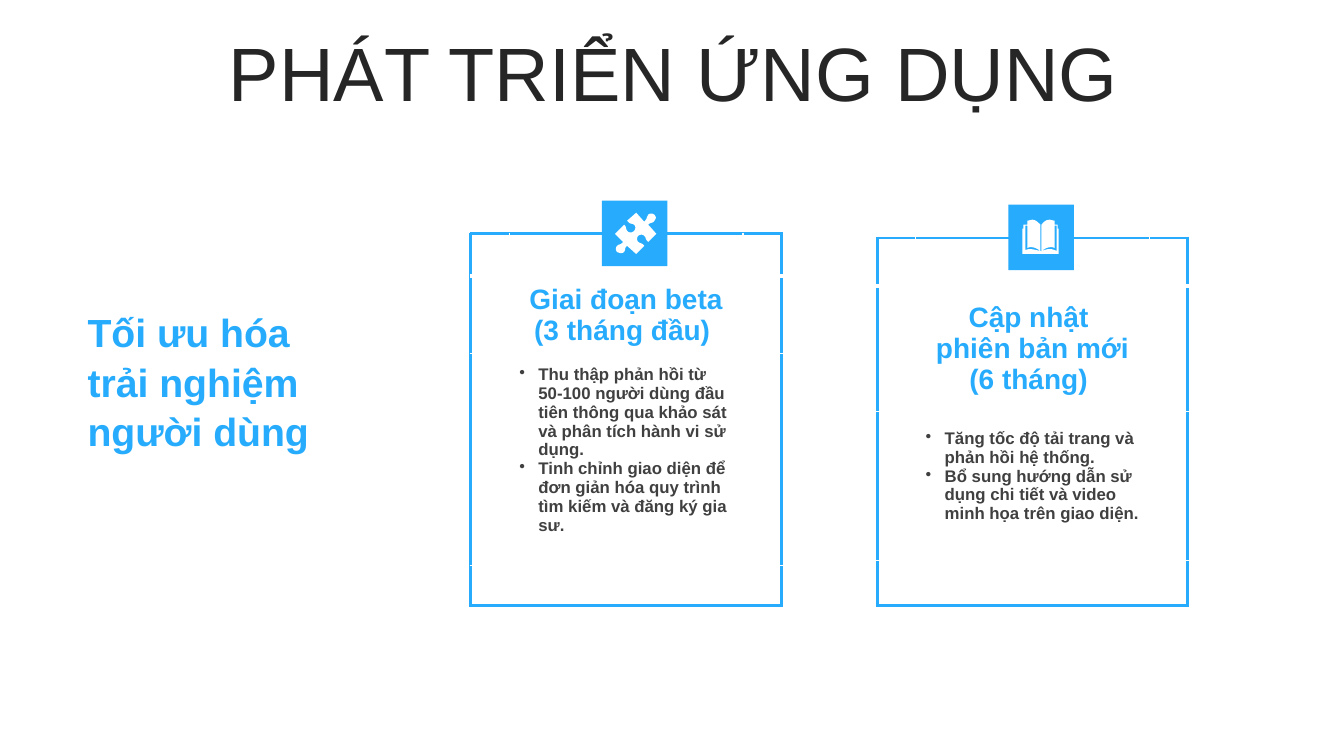
import pptx
import pptx.util
import pptx.dml.color
import pptx.enum.shapes
import pptx.enum.text
import pptx.oxml
import pptx.oxml.ns
from dataclasses import dataclass

Inches, Pt = pptx.util.Inches, pptx.util.Pt
ALIGN, ANCHOR = pptx.enum.text.PP_ALIGN, pptx.enum.text.MSO_ANCHOR

TITLE = "PHÁT TRIỂN ỨNG DỤNG"
AIM = ["Tối ưu hóa", "trải nghiệm người dùng"]

# Icon outlines in hundredths of an inch from the tile's corner:
# a pair is a straight step, six numbers are a Bézier step.
PUZZLE = [
    (52, 14), (54, 16, 54, 18, 52, 20), (51, 23, 48, 21, 46, 24), (54, 33), (46, 41),
    (43, 39, 44, 37, 42, 35), (40, 33, 37, 34, 36, 35), (35, 36, 34, 39, 36, 41),
    (39, 43, 40, 42, 42, 45), (34, 53), (25, 45), (22, 47, 24, 48, 22, 51),
    (20, 53, 17, 52, 15, 51), (14, 50, 13, 47, 15, 45), (17, 43, 19, 44, 21, 41),
    (13, 33), (22, 24), (25, 26, 23, 29, 26, 31), (28, 32, 30, 32, 32, 30),
    (33, 29, 34, 26, 32, 24), (29, 22, 28, 24, 25, 20), (34, 12), (42, 21),
    (45, 18, 44, 17, 46, 14), (48, 12, 51, 13, 52, 14),
]
BOOK = [
    (32, 46), (32, 46, 33, 47, 33, 46), (39, 44, 42, 43, 48, 46), (48, 21), (46, 21),
    (46, 29, 46, 36, 46, 43), (42, 41, 37, 43, 33, 46), (33, 20),
    (35, 17, 38, 15, 41, 15), (43, 15, 44, 16, 46, 16), (46, 20), (49, 20), (49, 24),
    (50, 24), (50, 49), (14, 49), (14, 24), (15, 24), (15, 20), (19, 20), (19, 16),
    (21, 16, 22, 15, 24, 15), (27, 15, 29, 17, 32, 20), (32, 46),
    (28, 43, 23, 41, 19, 43), (19, 21), (17, 21), (17, 45), (23, 43, 26, 45, 32, 46),
]

CARDS = [
    {"icon": PUZZLE, "rows": [0.42, 0.77, 2.1, 0.4],
     "heading": ["Giai đoạn beta", "(3 tháng đầu) "],
     "points": ["Thu thập phản hồi từ 50-100 người dùng đầu tiên thông qua khảo sát "
                "và phân tích hành vi sử dụng.",
                "Tinh chỉnh giao diện để đơn giản hóa quy trình tìm kiếm và đăng ký gia sư."]},
    {"icon": BOOK, "rows": [0.48, 1.24, 1.48, 0.45],
     "heading": ["Cập nhật ", "phiên bản mới", "(6 tháng) "],
     "points": ["Tăng tốc độ tải trang và phản hồi hệ thống.",
                "Bổ sung hướng dẫn sử dụng chi tiết và video minh họa trên giao diện."]},
]
COLUMNS = [0.38, 2.32, 0.38]
CARD_LEFT, CARD_PITCH, CARD_BOTTOM = 4.67, 4.03, 6.01
TILE_SIDE, TILE_INSET, TILE_RISE = 0.65, 1.3, 0.33


@dataclass(frozen=True)
class Theme:
    font: str = "Arial"
    accent: str = "27ACFD"
    paper: str = "FFFFFF"
    ink: str = "262626"
    body_ink: str = "404040"
    title: int = 54
    aim: int = 28
    heading: int = 20
    body: int = 12
    frame_line: float = 2.25
    inner_line: float = 1
    gap_line: float = 3


THEME = Theme()


def color(code):
    return pptx.dml.color.RGBColor.from_string(code)


def write(frame, lines, size, ink, bold=False, align=ALIGN.LEFT, bullet=False,
          spacing=None, before=0):
    for index, line in enumerate(lines):
        para = frame.paragraphs[0] if index == 0 else frame.add_paragraph()
        para.alignment, para.space_before = align, Pt(before)
        if spacing:
            para.line_spacing = spacing
        span = para.add_run()
        span.text = line
        span.font.name, span.font.size, span.font.bold = THEME.font, Pt(size), bold
        span.font.color.rgb = color(ink)
        if bullet:
            settings = para._p.get_or_add_pPr()
            settings.set("marL", str(Inches(0.19)))
            settings.set("indent", str(-Inches(0.19)))
            mark = pptx.oxml.parse_xml(
                f'<a:buChar {pptx.oxml.ns.nsdecls("a")} char="•"/>')
            settings.append(mark)


def draw_border(cell, side, ink, width):
    cell._tc.get_or_add_tcPr().append(pptx.oxml.parse_xml(
        f'<a:ln{side} {pptx.oxml.ns.nsdecls("a")} w="{Pt(width)}">'
        f'<a:solidFill><a:srgbClr val="{ink}"/></a:solidFill></a:ln{side}>'))


def frame_cell(cell, row, column, last_row, last_column):
    """Accent lines on the card's outer edge, paper-coloured lines inside."""
    outer = {"L": column == 0, "R": column == last_column,
             "T": row == 0, "B": row == last_row}
    for side, is_outer in outer.items():
        if is_outer:
            draw_border(cell, side, THEME.accent, THEME.frame_line)
        else:
            wide = (side, row) in (("B", 0), ("T", 1))
            draw_border(cell, side, THEME.paper,
                        THEME.gap_line if wide else THEME.inner_line)
    cell.fill.solid()
    cell.fill.fore_color.rgb = color(THEME.paper)
    cell.vertical_anchor = ANCHOR.MIDDLE


def paint(shape, ink):
    shape.shadow.inherit = False
    shape.fill.solid()
    shape.fill.fore_color.rgb = color(ink)
    shape.line.fill.background()


def trace(steps, samples=6):
    """Turn straight and Bézier steps into points in thousandths of an inch."""
    points = []
    for step in steps:
        if len(step) == 2:
            points.append(step)
            continue
        corners = [points[-1], step[:2], step[2:4], step[4:]]
        for index in range(1, samples + 1):
            t = index / samples
            weights = ((1 - t) ** 3, 3 * t * (1 - t) ** 2, 3 * t * t * (1 - t), t ** 3)
            points.append(tuple(sum(w * corner[axis] for w, corner in zip(weights, corners))
                                for axis in (0, 1)))
    return [(x * 10, y * 10) for x, y in points]


def add_icon(page, steps, left, top):
    tile = page.shapes.add_shape(pptx.enum.shapes.MSO_SHAPE.RECTANGLE, Inches(left),
                                 Inches(top), Inches(TILE_SIDE), Inches(TILE_SIDE))
    paint(tile, THEME.accent)
    start, *rest = trace(steps)
    outline = page.shapes.build_freeform(*start, scale=Inches(1) / 1000)
    outline.add_line_segments(rest, close=True)
    paint(outline.convert_to_shape(Inches(left), Inches(top)), THEME.paper)


def add_card(page, card, left):
    rows = card["rows"]
    top = CARD_BOTTOM - sum(rows)
    table = page.shapes.add_table(len(rows), len(COLUMNS), Inches(left), Inches(top),
                                  Inches(sum(COLUMNS)), Inches(sum(rows))).table
    table.first_row = table.horz_banding = False
    for column, width in enumerate(COLUMNS):
        table.columns[column].width = Inches(width)
    for row, height in enumerate(rows):
        table.rows[row].height = Inches(height)
        for column in range(len(COLUMNS)):
            frame_cell(table.cell(row, column), row, column,
                       len(rows) - 1, len(COLUMNS) - 1)
    write(table.cell(1, 1).text_frame, card["heading"], THEME.heading, THEME.accent,
          bold=True, align=ALIGN.CENTER)
    body = table.cell(2, 1)
    body.margin_bottom = Inches(0.24)
    write(body.text_frame, card["points"], THEME.body, THEME.body_ink,
          bold=True, bullet=True)
    add_icon(page, card["icon"], left + TILE_INSET, top - TILE_RISE)


def main():
    deck = pptx.Presentation()
    deck.slide_width, deck.slide_height = Inches(13.33), Inches(7.5)
    page = deck.slides.add_slide(deck.slide_layouts[5])

    title = page.shapes.title
    title.left, title.top = Inches(0.35), Inches(0.37)
    title.width, title.height = Inches(12.66), Inches(0.79)
    title.text_frame.auto_size = pptx.enum.text.MSO_AUTO_SIZE.NONE
    title.text_frame.vertical_anchor = ANCHOR.MIDDLE
    write(title.text_frame, [TITLE], THEME.title, THEME.ink, align=ALIGN.CENTER,
          spacing=0.9, before=10)

    aim = page.shapes.add_textbox(Inches(0.77), Inches(2.99), Inches(2.96), Inches(1.51))
    aim.text_frame.word_wrap = True
    write(aim.text_frame, AIM, THEME.aim, THEME.accent, bold=True, spacing=1.05)

    for index, card in enumerate(CARDS):
        add_card(page, card, CARD_LEFT + index * CARD_PITCH)
    deck.save("out.pptx")


if __name__ == "__main__":
    main()
